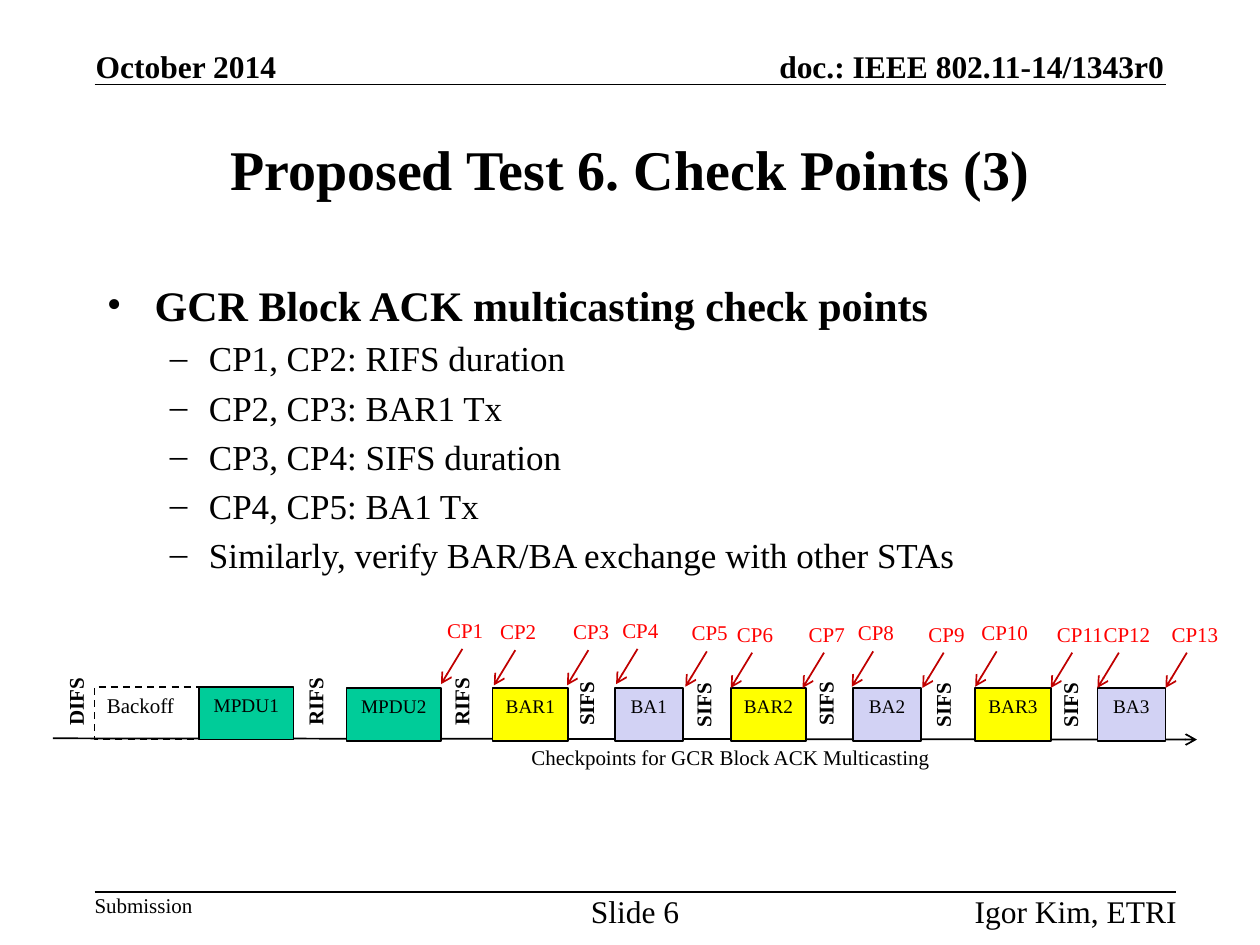
from lxml.etree import SubElement
from pptx import Presentation
from pptx.dml.color import RGBColor
from pptx.enum.dml import MSO_LINE
from pptx.enum.shapes import MSO_CONNECTOR, MSO_SHAPE
from pptx.enum.text import MSO_ANCHOR, MSO_AUTO_SIZE, PP_ALIGN
from pptx.oxml.ns import qn
from pptx.util import Pt

PX = 9144  # 100 px to the inch
FONT = "Times New Roman"
BLACK = RGBColor(0x00, 0x00, 0x00)
RED = RGBColor(0xFF, 0x00, 0x00)
DARK_RED = RGBColor(0xC0, 0x00, 0x00)
GREEN = RGBColor(0x00, 0xCC, 0x99)
YELLOW = RGBColor(0xFF, 0xFF, 0x00)
LAVENDER = RGBColor(0xD2, 0xD2, 0xF4)

presentation = Presentation()
presentation.slide_width = 1000 * PX
presentation.slide_height = 750 * PX
slide = presentation.slides.add_slide(presentation.slide_layouts[6])


def add_label(box, text, size, bold=False, color=BLACK, align=PP_ALIGN.LEFT,
              anchor=MSO_ANCHOR.TOP, inset=True):
    """Add a one-line text box that fits its text."""
    shape = slide.shapes.add_textbox(*(value * PX for value in box))
    frame = shape.text_frame
    frame.word_wrap = False
    frame.auto_size = MSO_AUTO_SIZE.SHAPE_TO_FIT_TEXT
    frame.vertical_anchor = anchor
    if not inset:
        frame.margin_left = frame.margin_right = 0
        frame.margin_top = frame.margin_bottom = 0
    paragraph = frame.paragraphs[0]
    paragraph.alignment = align
    run = paragraph.add_run()
    run.text = text
    run.font.name = FONT
    run.font.size = Pt(size)
    run.font.bold = bold
    run.font.color.rgb = color
    return shape


def add_line(start_x, start_y, end_x, end_y, color=BLACK, arrow=False):
    line = slide.shapes.add_connector(
        MSO_CONNECTOR.STRAIGHT, start_x * PX, start_y * PX, end_x * PX, end_y * PX)
    line.line.color.rgb = color
    line.line.width = Pt(1)
    if arrow:
        SubElement(line.line._get_or_add_ln(), qn("a:tailEnd"), type="arrow")
    SubElement(line._element.spPr, qn("a:effectLst"))


# Header and footer
add_label((565, 37, 359, 30), "doc.: IEEE 802.11-14/1343r0", 18, True,
          align=PP_ALIGN.RIGHT, anchor=MSO_ANCHOR.BOTTOM, inset=False)
add_label((76, 37, 145, 30), "October 2014", 18, True,
          anchor=MSO_ANCHOR.BOTTOM, inset=False)
add_line(75, 67, 925, 67)
add_label((75, 708, 78, 20), "Submission", 12, inset=False)
add_label((459, 708, 90, 30), "Slide 6", 18, align=PP_ALIGN.CENTER, inset=False)
add_label((764, 708, 170, 30), "Igor Kim, ETRI", 18, align=PP_ALIGN.RIGHT, inset=False)
add_line(75, 708, 933, 708)

# Title
title = add_label((75, 75, 850, 117), "Proposed Test 6. Check Points (3)", 32, True,
                  align=PP_ALIGN.CENTER, anchor=MSO_ANCHOR.MIDDLE)
title.text_frame.auto_size = MSO_AUTO_SIZE.NONE
title.text_frame.word_wrap = True

# Bullet list: text, level
bullets = [
    ("GCR Block ACK multicasting check points", 0),
    ("CP1, CP2: RIFS duration", 1),
    ("CP2, CP3: BAR1 Tx", 1),
    ("CP3, CP4: SIFS duration", 1),
    ("CP4, CP5: BA1 Tx", 1),
    ("Similarly, verify BAR/BA exchange with other STAs", 1),
]
# Per level: bullet, left margin, hanging indent, text size
level_styles = [("•", 38, 38, 24), ("–", 81, 31, 20)]
body = slide.shapes.add_textbox(75 * PX, 217 * PX, 850 * PX, 450 * PX)
body.text_frame.word_wrap = True
for index, (text, level) in enumerate(bullets):
    character, margin, hanging, size = level_styles[level]
    paragraph = body.text_frame.paragraphs[0] if index == 0 else body.text_frame.add_paragraph()
    properties = paragraph._p.get_or_add_pPr()
    properties.set("marL", str(margin * PX))
    properties.set("indent", str(-hanging * PX))
    SubElement(properties, qn("a:buFont"), typeface=FONT)
    SubElement(properties, qn("a:buChar"), char=character)
    paragraph.font.size = Pt(size)
    paragraph.level = level
    if index:
        paragraph.space_before = Pt(4)
    run = paragraph.add_run()
    run.text = text
    run.font.name = FONT
    run.font.size = Pt(size)
    run.font.bold = level == 0
    run.font.color.rgb = BLACK

# Time axis
add_line(42, 586, 950, 587, arrow=True)
add_label((412, 586, 340, 30), "Checkpoints for GCR Block ACK Multicasting", 12)

# Frames on the axis: text, left, top, width, fill
frames = [
    ("Backoff", 75, 545, 83, None),
    ("MPDU1", 158, 545, 75, GREEN),
    ("MPDU2", 275, 546, 75, GREEN),
    ("BAR1", 391, 546, 60, YELLOW),
    ("BA1", 488, 546, 54, LAVENDER),
    ("BAR2", 580, 546, 60, YELLOW),
    ("BA2", 677, 546, 54, LAVENDER),
    ("BAR3", 774, 546, 60, YELLOW),
    ("BA3", 871, 546, 54, LAVENDER),
]
for text, left, top, width, fill in frames:
    shape = slide.shapes.add_shape(
        MSO_SHAPE.RECTANGLE, left * PX, top * PX, width * PX, 42 * PX)
    shape.shadow.inherit = False
    shape.line.color.rgb = BLACK
    shape.line.width = Pt(1)
    if fill is None:
        shape.fill.background()
        shape.line.dash_style = MSO_LINE.DASH
    else:
        shape.fill.solid()
        shape.fill.fore_color.rgb = fill
    shape.text_frame.word_wrap = True
    shape.text_frame.vertical_anchor = MSO_ANCHOR.TOP
    paragraph = shape.text_frame.paragraphs[0]
    paragraph.alignment = PP_ALIGN.LEFT if fill is None else PP_ALIGN.CENTER
    run = paragraph.add_run()
    run.text = text
    run.font.name = FONT
    run.font.size = Pt(12 if fill is None else 11)
    run.font.color.rgb = BLACK

# Gaps between the frames, read upwards: text, left, top, height
gaps = [
    ("DIFS", 45, 538, 48), ("RIFS", 235, 538, 48), ("RIFS", 351, 538, 48),
    ("SIFS", 450, 540, 46), ("SIFS", 543, 541, 46), ("SIFS", 640, 540, 46),
    ("SIFS", 733, 541, 46), ("SIFS", 834, 541, 46),
]
for text, left, top, height in gaps:
    gap = add_label((left, top, 40, height), text, 12, True)
    gap.rotation = 180
    gap.text_frame._txBody.bodyPr.set("vert", "eaVert")

# Check points CP1 to CP13: left and top of each label
check_points = [
    (345, 485), (387, 486), (445, 486), (484, 485), (539, 487), (575, 488), (632, 488),
    (671, 487), (727, 488), (769, 487), (829, 488), (866, 488), (920, 488),
]
for number, (left, top) in enumerate(check_points, start=1):
    add_line(left + 22, top + 30, left + 5, top + 58, DARK_RED, arrow=True)
    add_label((left, top, 49 if number < 10 else 58, 30), f"CP{number}", 12, color=RED)

presentation.save("out.pptx")
